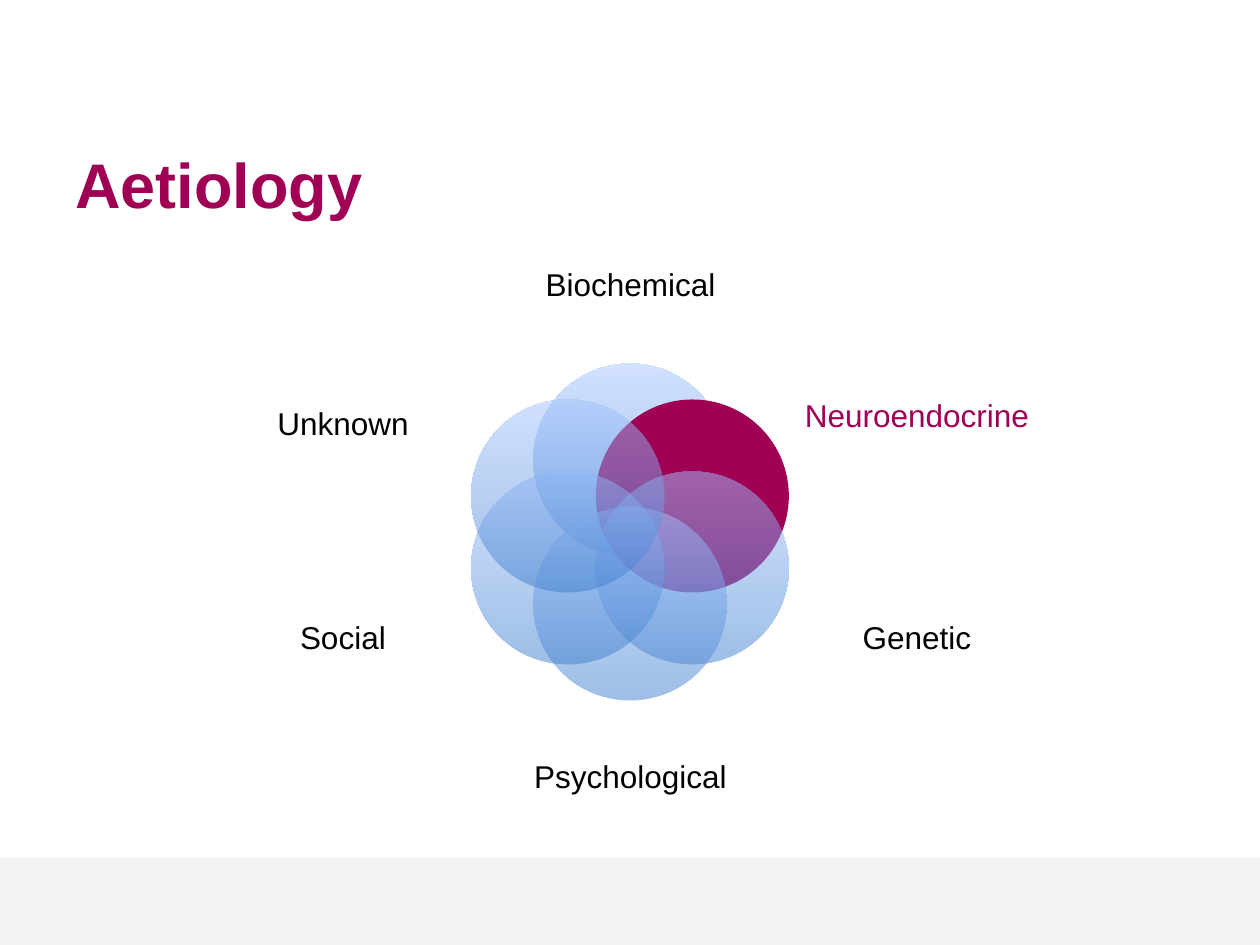
import math
from dataclasses import dataclass

import pptx
import pptx.dml.color
import pptx.enum.shapes
import pptx.enum.text
import pptx.oxml.ns
import pptx.util
from lxml import etree

PX = 914400 // 126
SLIDE_SIZE = (1260, 945)


@dataclass(frozen=True)
class Theme:
    font: str = "Arial"
    title_size: int = 36
    label_size: int = 18
    accent: str = "A00054"
    text: str = "000000"
    footer: str = "F2F2F2"
    petal: tuple = ("3F7FCE", "A4C4FF")
    petal_alpha: int = 50


THEME = Theme()

TITLE = "Aetiology"
TITLE_BOX = (63, 134, 1134, 62)
FOOTER_BOX = (0, 858, 1260, 87)
CENTER = (630, 532)
RING_RADIUS = 72
CIRCLE = 193

# Clockwise from the top: label, label box, highlighted
CAUSES = [
    ("Biochemical", (510, 221, 241, 131), False),
    ("Neuroendocrine", (803, 345, 228, 144), True),
    ("Genetic", (803, 559, 228, 160), False),
    ("Psychological", (510, 713, 241, 131), False),
    ("Social", (229, 559, 228, 160), False),
    ("Unknown", (229, 345, 228, 160), False),
]


def emu(*lengths):
    return [pptx.util.Emu(round(length * PX)) for length in lengths]


def rgb(color):
    return pptx.dml.color.RGBColor.from_string(color)


def add_plain_shape(slide, kind, box, color):
    shape = slide.shapes.add_shape(kind, *emu(*box))
    shape.shadow.inherit = False
    shape.line.fill.background()
    shape.fill.solid()
    shape.fill.fore_color.rgb = rgb(color)
    return shape


def make_translucent_gradient(shape):
    """Fill from the first petal colour at the bottom to the second at the top."""
    shape.fill.gradient()
    shape.fill.gradient_angle = 90
    for stop, position, color in zip(shape.fill.gradient_stops, (0, 1), THEME.petal):
        stop.position = position
        stop.color.rgb = rgb(color)
    qn = pptx.oxml.ns.qn
    for color in shape.fill._xPr.find(qn("a:gradFill")).iter(qn("a:srgbClr")):
        etree.SubElement(color, qn("a:alpha"), val=str(THEME.petal_alpha * 1000))


def add_text(slide, box, text, size, color, bold=False):
    text_box = slide.shapes.add_textbox(*emu(*box))
    frame = text_box.text_frame
    frame.word_wrap = True
    paragraph = frame.paragraphs[0]
    paragraph.text = text
    paragraph.font.name = THEME.font
    paragraph.font.size = pptx.util.Pt(size)
    paragraph.font.bold = bold
    paragraph.font.color.rgb = rgb(color)
    return frame


def add_label(slide, box, text, color):
    frame = add_text(slide, box, text, THEME.label_size, color)
    frame.margin_left = frame.margin_right = frame.margin_top = frame.margin_bottom = 0
    frame.vertical_anchor = pptx.enum.text.MSO_ANCHOR.MIDDLE
    paragraph = frame.paragraphs[0]
    paragraph.alignment = pptx.enum.text.PP_ALIGN.CENTER
    paragraph.line_spacing = 0.9


def main():
    presentation = pptx.Presentation()
    presentation.slide_width, presentation.slide_height = emu(*SLIDE_SIZE)
    slide = presentation.slides.add_slide(presentation.slide_layouts[6])
    shape_kind = pptx.enum.shapes.MSO_SHAPE

    add_plain_shape(slide, shape_kind.RECTANGLE, FOOTER_BOX, THEME.footer)
    title = add_text(slide, TITLE_BOX, TITLE, THEME.title_size, THEME.accent, bold=True)
    title.margin_top = emu(12)[0]

    for index, (label, label_box, highlighted) in enumerate(CAUSES):
        angle = math.tau * index / len(CAUSES)
        left = CENTER[0] + RING_RADIUS * math.sin(angle) - CIRCLE / 2
        top = CENTER[1] - RING_RADIUS * math.cos(angle) - CIRCLE / 2
        circle = add_plain_shape(
            slide, shape_kind.OVAL, (left, top, CIRCLE, CIRCLE), THEME.accent
        )
        if not highlighted:
            make_translucent_gradient(circle)
        add_label(slide, label_box, label, THEME.accent if highlighted else THEME.text)

    presentation.save("out.pptx")


if __name__ == "__main__":
    main()
